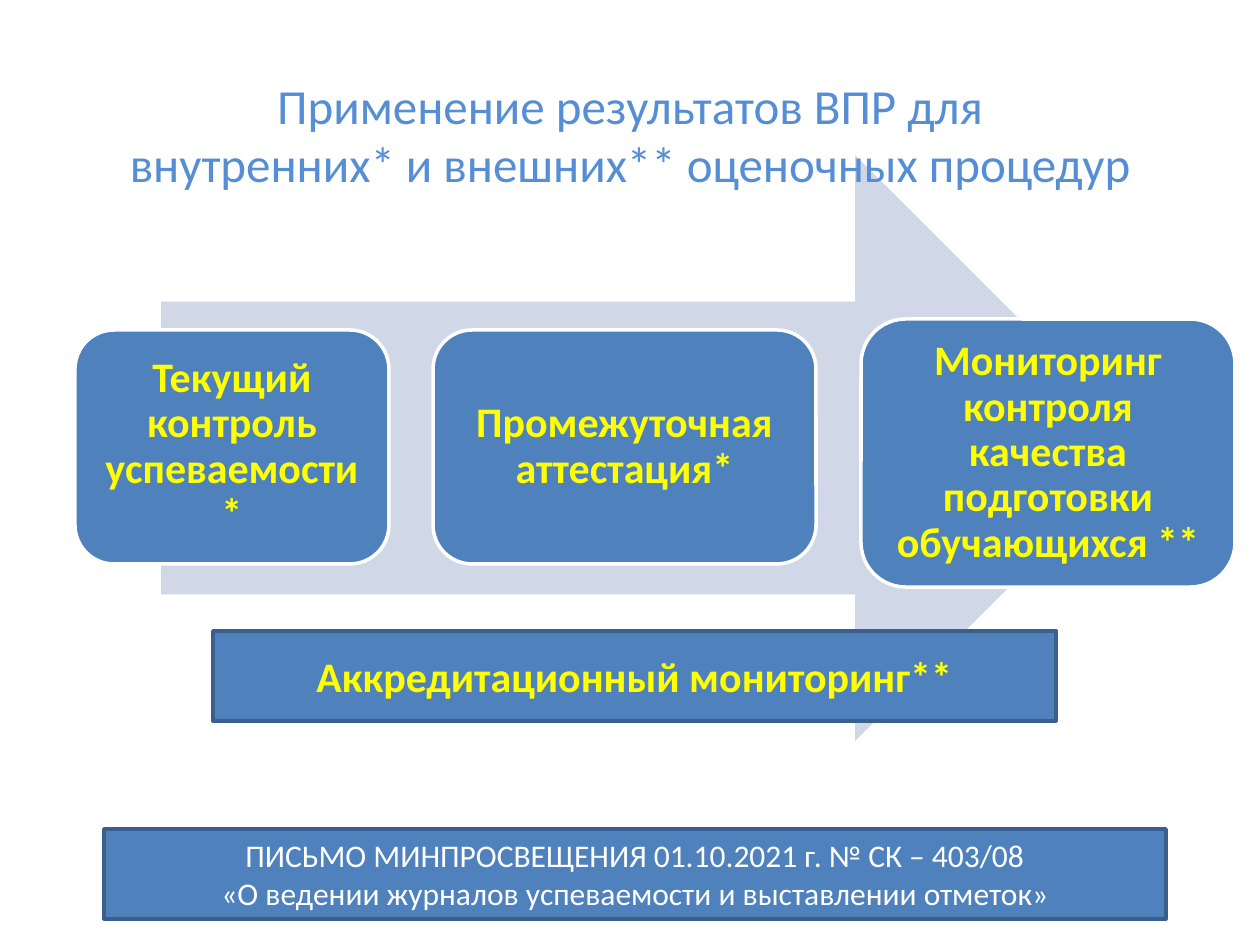
from pptx import Presentation
from pptx.dml.color import RGBColor
from pptx.enum.shapes import MSO_SHAPE as Shape
from pptx.enum.text import MSO_ANCHOR as Anchor, PP_ALIGN as Align
from pptx.util import Emu, Pt

PX_PER_INCH = 126
BLUE, NAVY, PALE = "4F81BD", "3A5F8C", "D0D8E8"
WHITE, YELLOW, SKY = "FFFFFF", "FFFF00", "558ED5"


def px(length):
    return Emu(round(length * 914400 / PX_PER_INCH))


def color(value):
    return RGBColor.from_string(value)


class SlideBuilder:
    """Draws the elements of one slide in a shared style."""

    font_name = "Calibri"
    line_width = Pt(2)

    def __init__(self, slide):
        self.slide = slide

    def shape(self, kind, place, fill, line=None):
        box = self.slide.shapes.add_shape(kind, *map(px, place))
        box.shadow.inherit = False
        box.fill.solid()
        box.fill.fore_color.rgb = color(fill)
        if line:
            box.line.color.rgb = color(line)
            box.line.width = self.line_width
        else:
            box.line.fill.background()
        return box

    def label(self, box, text, size, ink, bold=False, spacing=None):
        frame = box.text_frame
        frame.word_wrap = True
        frame.vertical_anchor = Anchor.MIDDLE
        for index, line in enumerate(text.split("\n")):
            para = frame.add_paragraph() if index else frame.paragraphs[0]
            para.text = line
            para.alignment = Align.CENTER
            para.line_spacing = spacing
            para.font.name = self.font_name
            para.font.size = Pt(size)
            para.font.bold = bold
            para.font.color.rgb = color(ink)
        return frame

    def title(self, place, text):
        box = self.slide.shapes.add_textbox(*map(px, place))
        self.label(box, text, 28, SKY)

    def stage(self, place, text):
        box = self.shape(Shape.ROUNDED_RECTANGLE, place, BLUE, WHITE)
        frame = self.label(box, text, 24, YELLOW, True, 0.9)
        frame.margin_left = frame.margin_right = px(13)
        frame.margin_top = frame.margin_bottom = px(13)

    def banner(self, place, text, size, ink, bold=False):
        box = self.shape(Shape.RECTANGLE, place, BLUE, NAVY)
        self.label(box, text, size, ink, bold)


def main():
    deck = Presentation()
    deck.slide_width, deck.slide_height = px(1260), px(945)
    page = SlideBuilder(deck.slides.add_slide(deck.slide_layouts[6]))

    page.banner(
        (104, 829, 1062, 90),
        "ПИСЬМО МИНПРОСВЕЩЕНИЯ 01.10.2021 г. № СК – 403/08\n"
        "«О ведении журналов успеваемости и выставлении отметок»",
        18, WHITE,
    )
    page.shape(Shape.RIGHT_ARROW, (161, 155, 987, 586), PALE)

    stages = [
        ((75, 330, 314, 234), "Текущий контроль успеваемости*"),
        ((433, 330, 383, 234), "Промежуточная аттестация*"),
        ((861, 319, 374, 268),
         "Мониторинг контроля качества подготовки обучающихся **"),
    ]
    for place, text in stages:
        page.stage(place, text)

    page.title(
        (0, 45, 1260, 178),
        "Применение результатов ВПР для\v"
        "внутренних* и внешних** оценочных процедур",
    )
    page.banner((213, 631, 843, 90), "Аккредитационный мониторинг**",
                24, YELLOW, True)
    deck.save("out.pptx")


if __name__ == "__main__":
    main()
